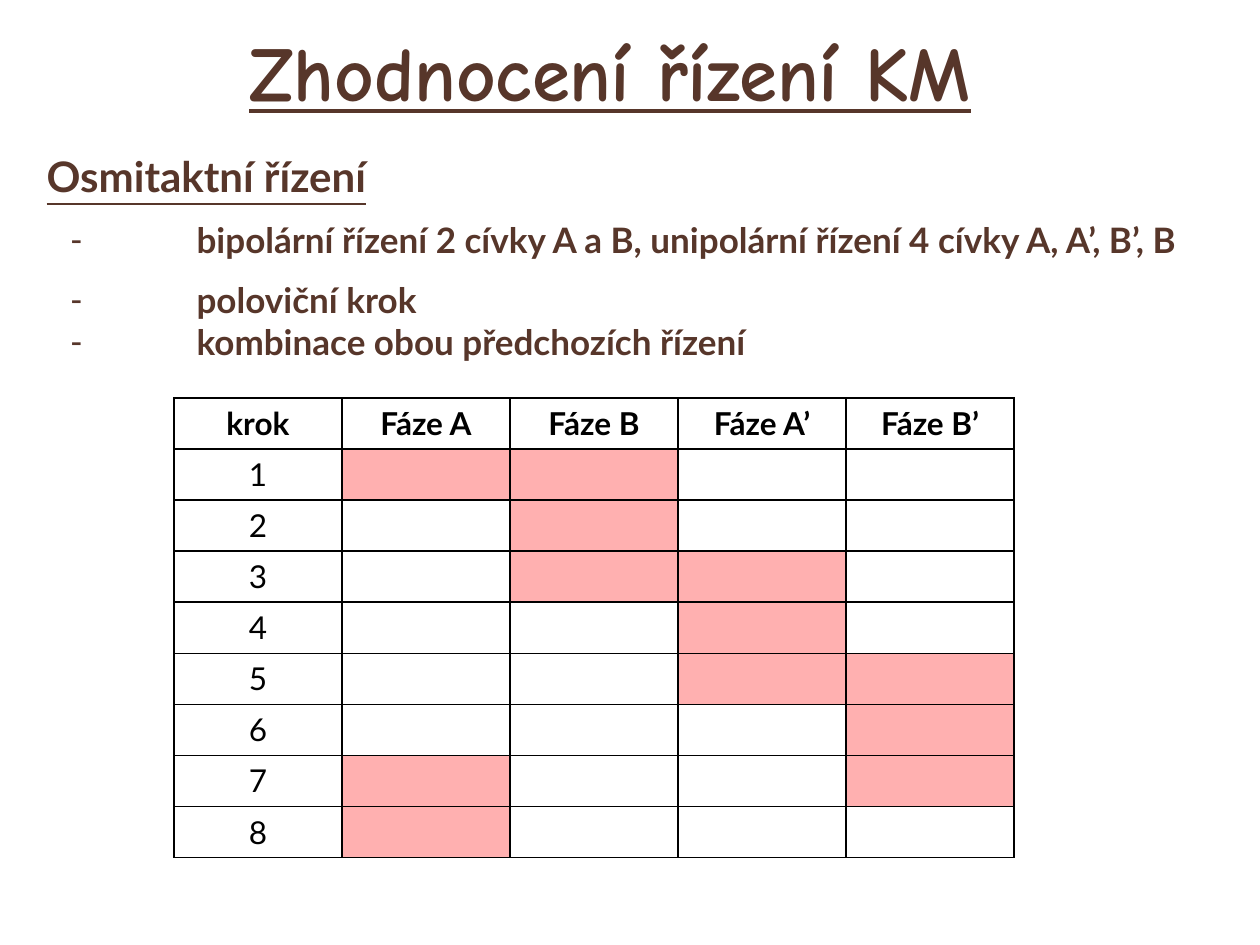
from lxml import etree
from pptx import Presentation
from pptx import util as u
from pptx.dml.color import RGBColor
from pptx.enum import text
from pptx.oxml import ns

HEADING = "Osmitaktní řízení"
POINTS = [
    ("bipolární řízení 2 cívky A a B, unipolární řízení 4 cívky A, A’, B’, B", 10),
    ("poloviční krok", 10),
    ("kombinace obou předchozích řízení", 0),
]
HEADER = ["krok", "Fáze A", "Fáze B", "Fáze A’", "Fáze B’"]
ACTIVE_PHASES = [(1, 2), (2,), (2, 3), (3,), (3, 4), (4,), (1, 4), (1,)]


def colour(code):
    return RGBColor.from_string(code)


class StepSlide:
    brown, black, white, pink = "57362A", "000000", "FFFFFF", "FFB0B0"
    title_font, body_font = "Comic Neue", "Lato"

    def __init__(self, deck):
        self.width, self.height = deck.slide_width, deck.slide_height
        self.slide = deck.slides.add_slide(deck.slide_layouts[1])

    def box(self, left, top, width, height):
        return (int(left * self.width), int(top * self.height),
                int(width * self.width), int(height * self.height))

    def place(self, holder, area):
        holder.left, holder.top, holder.width, holder.height = self.box(*area)
        holder.text_frame.word_wrap = True
        holder.text_frame.auto_size = text.MSO_AUTO_SIZE.NONE
        return holder.text_frame

    def style(self, paragraph, size, ink, face=None, bold=True, underline=False):
        font = paragraph.font
        font.name, font.size = face or self.body_font, u.Pt(size)
        font.bold, font.underline = bold, underline
        font.color.rgb = colour(ink)

    def title(self, wording, area):
        frame = self.place(self.slide.shapes.title, area)
        frame.vertical_anchor = text.MSO_ANCHOR.MIDDLE
        frame.text = wording
        line = frame.paragraphs[0]
        line.alignment = text.PP_ALIGN.CENTER
        self.style(line, 44, self.brown, self.title_font, underline=True)

    def bullet(self, paragraph, mark, margin, indent):
        props = paragraph._p.get_or_add_pPr()
        props.set("marL", str(u.Inches(margin)))
        props.set("indent", str(u.Inches(indent)))
        if mark:
            etree.SubElement(props, ns.qn("a:buChar")).set("char", mark)
        else:
            etree.SubElement(props, ns.qn("a:buNone"))

    def points(self, heading, items, area):
        frame = self.place(self.slide.placeholders[1], area)
        frame.text = heading
        lead = frame.paragraphs[0]
        lead.space_before = u.Pt(0)
        self.bullet(lead, None, 0, 0)
        self.style(lead, 24, self.brown, underline=True)
        for wording, gap in items:
            point = frame.add_paragraph()
            point.text = wording
            point.space_before = u.Pt(gap)
            self.bullet(point, "-", 1.19, -1)
            self.style(point, 20, self.brown)

    def borders(self, cell):
        props = cell._tc.get_or_add_tcPr()
        for place, side in enumerate(("lnL", "lnR", "lnT", "lnB")):
            edge = etree.Element(ns.qn(f"a:{side}"), w=str(u.Pt(1)))
            fill = etree.SubElement(edge, ns.qn("a:solidFill"))
            etree.SubElement(fill, ns.qn("a:srgbClr"), val=self.black)
            props.insert(place, edge)

    def phase_table(self, header, active, area):
        rows = [header] + [[str(step)] + [""] * (len(header) - 1)
                           for step in range(1, len(active) + 1)]
        table = self.slide.shapes.add_table(
            len(rows), len(header), *self.box(*area)).table
        for r, row in enumerate(rows):
            for c, wording in enumerate(row):
                cell = table.cell(r, c)
                cell.text = wording
                cell.fill.solid()
                lit = r > 0 and c in active[r - 1]
                cell.fill.fore_color.rgb = colour(self.pink if lit else self.white)
                self.borders(cell)
                label = cell.text_frame.paragraphs[0]
                label.alignment = text.PP_ALIGN.CENTER
                self.style(label, 18, self.black, bold=r == 0)


def main():
    deck = Presentation()
    deck.slide_width, deck.slide_height = u.Inches(10), u.Inches(7.5)
    page = StepSlide(deck)
    page.title("Zhodnocení řízení KM", (0.012, 0.017, 0.945, 0.116))
    page.points(HEADING, POINTS, (0.027, 0.153, 0.945, 0.247))
    page.phase_table(HEADER, ACTIVE_PHASES, (0.138, 0.421, 0.667, 0.487))
    deck.save("out.pptx")


if __name__ == "__main__":
    main()
